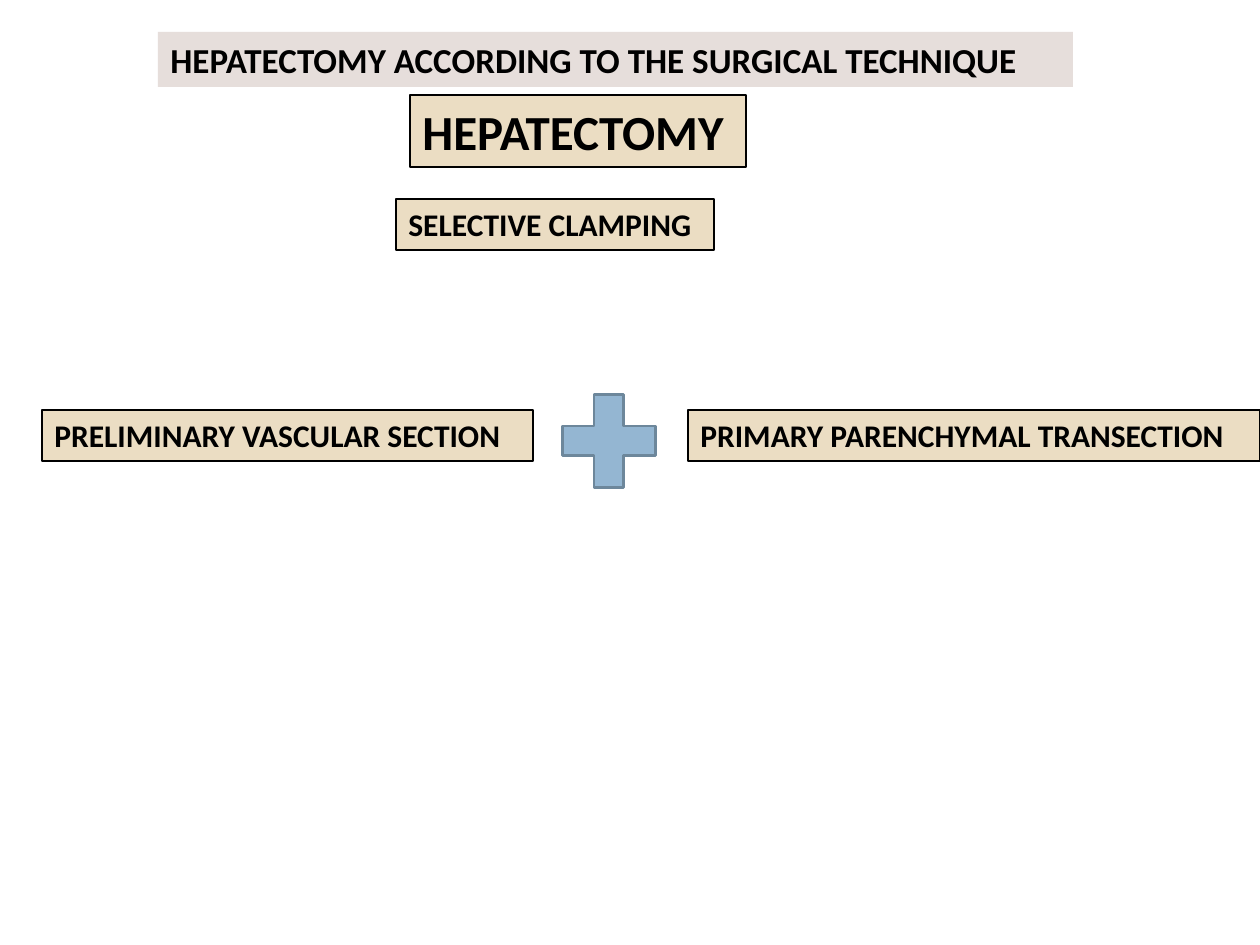
from pptx import Presentation
from pptx.dml.color import RGBColor
from pptx.enum.shapes import MSO_SHAPE
from pptx.enum.text import MSO_ANCHOR, PP_ALIGN
from pptx.util import Emu, Pt

PX = 914400 // 126
BLACK = RGBColor(0x00, 0x00, 0x00)
ROSE = RGBColor(0xE6, 0xDE, 0xDB)
SAND = RGBColor(0xEB, 0xDD, 0xC3)
BLUE = RGBColor(0x94, 0xB6, 0xD2)
SLATE = RGBColor(0x6D, 0x87, 0x9B)


def px(length):
    return Emu(length * PX)


def add_label(slide, box, wording, size, fill=SAND, outlined=True):
    label = slide.shapes.add_textbox(*map(px, box))
    label.fill.solid()
    label.fill.fore_color.rgb = fill
    if outlined:
        label.line.color.rgb = BLACK
        label.line.width = Pt(0.75)
    frame = label.text_frame
    frame.word_wrap = True
    frame.vertical_anchor = MSO_ANCHOR.TOP
    paragraph = frame.paragraphs[0]
    paragraph.alignment = PP_ALIGN.LEFT
    run = paragraph.add_run()
    run.text = wording
    run.font.name = "Calibri"
    run.font.size = Pt(size)
    run.font.bold = True
    run.font.color.rgb = BLACK


def add_plus(slide, box):
    plus = slide.shapes.add_shape(MSO_SHAPE.MATH_PLUS, *map(px, box))
    plus.shadow.inherit = False
    plus.fill.solid()
    plus.fill.fore_color.rgb = BLUE
    plus.line.color.rgb = SLATE
    plus.line.width = Pt(1.5)


def add_heading(slide, box):
    left, top, width, height = box
    add_label(slide, (left, top, width, 55),
              "HEPATECTOMY ACCORDING TO THE SURGICAL TECHNIQUE", 20, ROSE, False)
    add_label(slide, (left + 252, top + 63, 336, 72), "HEPATECTOMY", 28)
    add_label(slide, (left + 238, top + height - 51, 318, 51), "SELECTIVE CLAMPING", 18)


def add_techniques(slide, box):
    left, top, width, height = box
    label_top = top + 32
    add_label(slide, (left, label_top, 491, 51), "PRELIMINARY VASCULAR SECTION", 18)
    add_label(slide, (left + width - 572, label_top, 572, 51),
              "PRIMARY PARENCHYMAL TRANSECTION", 18)
    add_plus(slide, (left + 504, top, height, height))


def main():
    deck = Presentation()
    deck.slide_width, deck.slide_height = px(1260), px(945)
    slide = deck.slides.add_slide(deck.slide_layouts[6])
    add_heading(slide, (158, 32, 915, 218))
    add_techniques(slide, (42, 378, 1218, 126))
    deck.save("out.pptx")


if __name__ == "__main__":
    main()
